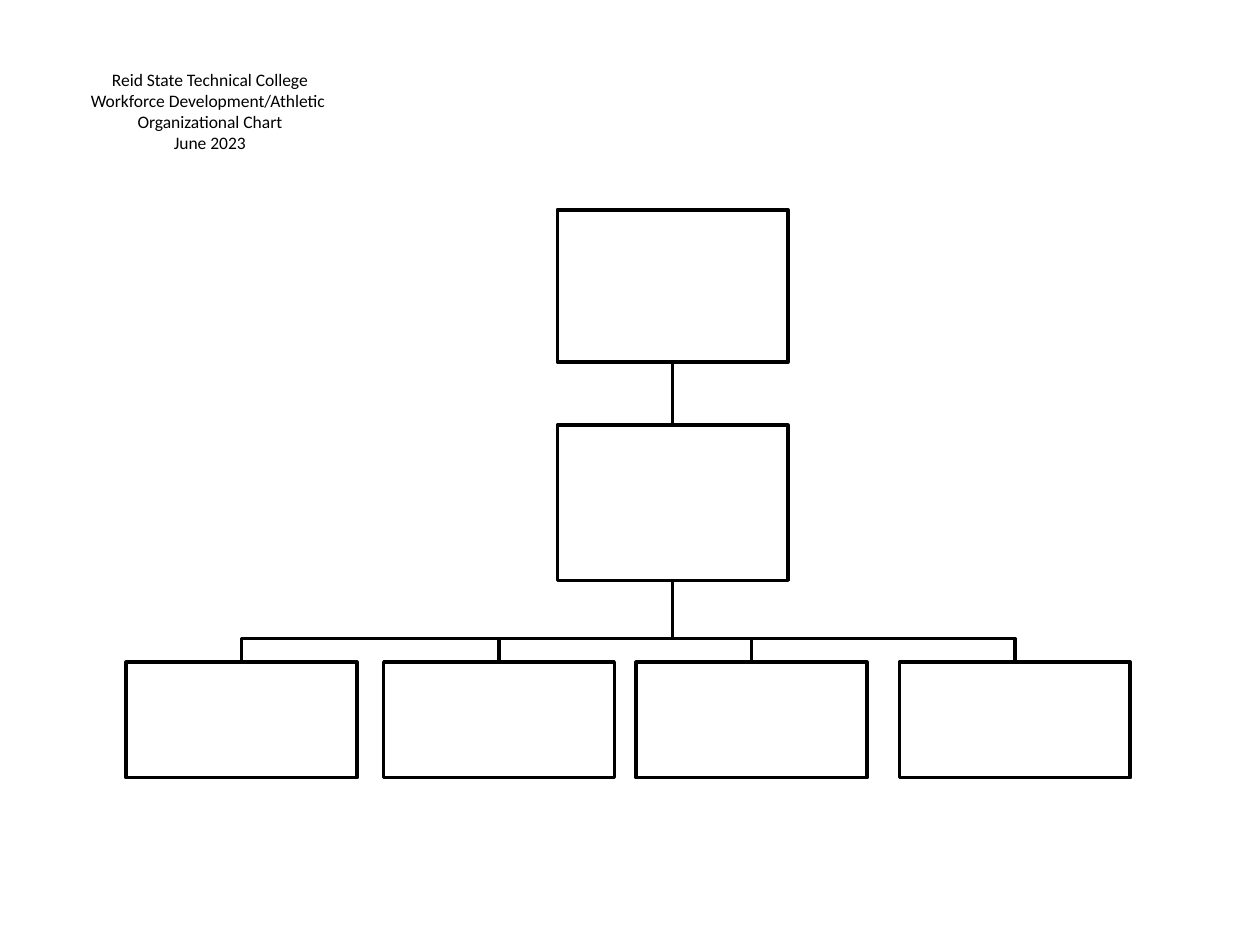
from pptx import Presentation
from pptx.dml.color import RGBColor
from pptx.enum.shapes import MSO_CONNECTOR, MSO_SHAPE
from pptx.enum.text import PP_ALIGN
from pptx.oxml.ns import qn
from pptx.util import Cm, Pt
from lxml.etree import SubElement

BLACK = RGBColor(0, 0, 0)
WHITE = RGBColor(255, 255, 255)

WIDTH = 4.65
TRUNK = 13.56
HEAD = (4.23, 3.07)  # top, height
DEPUTY = (8.57, 3.13)
STAFF = (13.35, 2.33)
BUS = 12.87
STAFF_MIDS = (4.87, 10.06, 15.15, 20.46)
TITLE = (
    "Reid State Technical College",
    "Workforce Development/Athletic ",
    "Organizational Chart",
    "June 2023",
)


def set_line(shape):
    shape.line.color.rgb = BLACK
    shape.line.width = Pt(2)


def add_box(slide, mid, level):
    """Draw an empty box centred on mid, at the top and height of level."""
    top, height = level
    box = slide.shapes.add_shape(
        MSO_SHAPE.RECTANGLE, Cm(mid - WIDTH / 2), Cm(top), Cm(WIDTH), Cm(height)
    )
    box.shadow.inherit = False
    box.fill.solid()
    box.fill.fore_color.rgb = WHITE
    set_line(box)


def add_stem(slide, start, end):
    """Draw a straight line down the trunk."""
    stem = slide.shapes.add_connector(
        MSO_CONNECTOR.STRAIGHT, Cm(TRUNK), Cm(start), Cm(TRUNK), Cm(end)
    )
    set_line(stem)
    SubElement(stem._element.spPr, qn("a:effectLst"))


def add_branch(slide, mid, start, end):
    """Draw a bent line from the trunk, along the bus, down to mid."""
    path = slide.shapes.build_freeform(Cm(TRUNK), Cm(start))
    bends = [(TRUNK, BUS), (mid, BUS), (mid, end)]
    path.add_line_segments([(Cm(x), Cm(y)) for x, y in bends], close=False)
    branch = path.convert_to_shape()
    branch.shadow.inherit = False
    branch.fill.background()
    set_line(branch)


def add_title(slide):
    box = slide.shapes.add_textbox(Cm(0.84), Cm(1.27), Cm(6.78), Cm(2.39))
    frame = box.text_frame
    frame.word_wrap = True
    frame.text = "\n".join(TITLE)
    for paragraph in frame.paragraphs:
        paragraph.alignment = PP_ALIGN.CENTER
        paragraph.font.name = "Calibri"
        paragraph.font.size = Pt(10)
        paragraph.font.color.rgb = BLACK


def main():
    deck = Presentation()
    deck.slide_width, deck.slide_height = Cm(25.4), Cm(19.05)
    slide = deck.slides.add_slide(deck.slide_layouts[6])

    for mid in STAFF_MIDS:
        add_branch(slide, mid, sum(DEPUTY), STAFF[0])
    add_stem(slide, sum(HEAD), DEPUTY[0])
    for level in (HEAD, DEPUTY):
        add_box(slide, TRUNK, level)
    for mid in reversed(STAFF_MIDS):
        add_box(slide, mid, STAFF)
    add_title(slide)

    deck.save("out.pptx")


if __name__ == "__main__":
    main()
